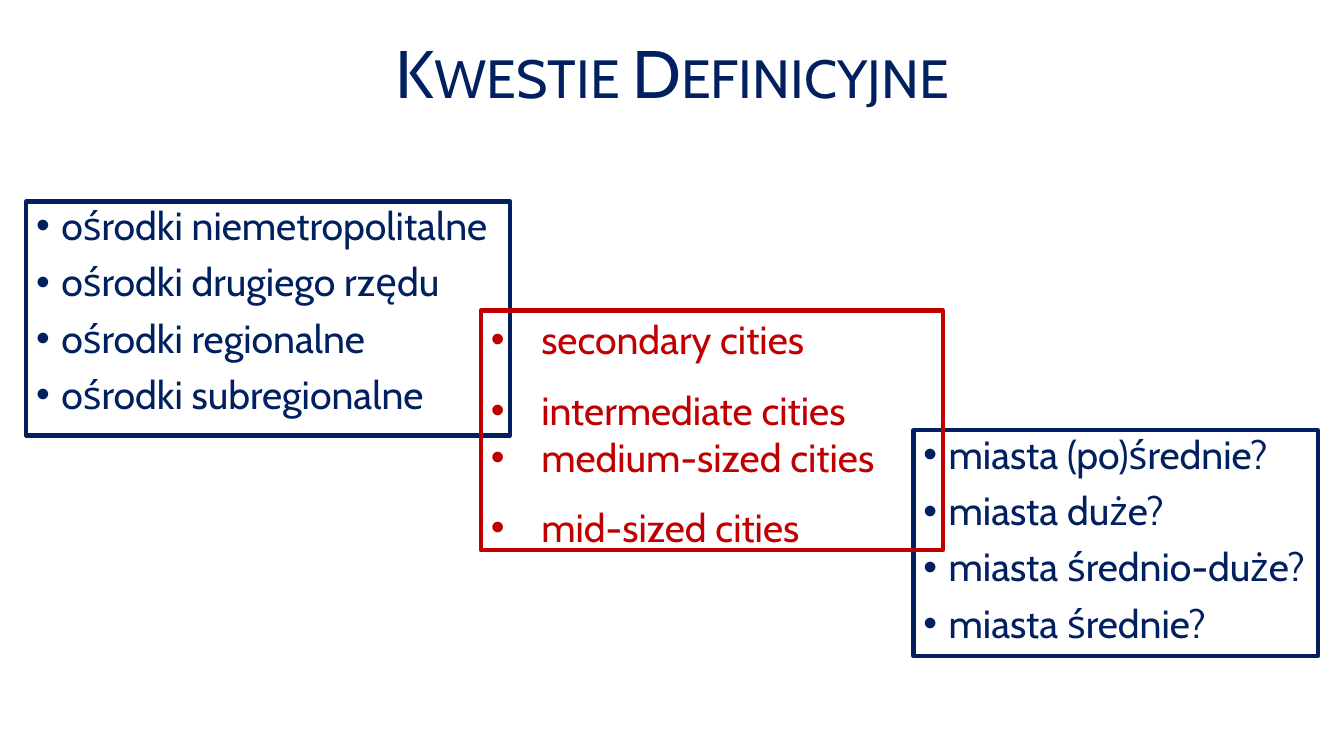
from dataclasses import dataclass

from lxml.etree import SubElement
from pptx import Presentation
from pptx.dml.color import RGBColor
from pptx.enum.text import MSO_ANCHOR, MSO_AUTO_SIZE, PP_ALIGN
from pptx.oxml.ns import qn
from pptx.slide import Slide
from pptx.text.text import _Paragraph as Paragraph, _Run as Run
from pptx.util import Inches, Pt

NAVY = RGBColor(0x00, 0x20, 0x60)
RED = RGBColor(0xC0, 0x00, 0x00)
FONT = "Cabin"


@dataclass(frozen=True)
class TermBox:
    left: float
    top: float
    width: float
    height: float
    color: RGBColor
    terms: tuple[str, ...]
    indent: float = 0.25
    spacings: tuple[float, ...] = (0.9,) * 4
    space_before: int = 10
    auto_size: MSO_AUTO_SIZE = MSO_AUTO_SIZE.NONE


BOXES = (
    TermBox(0.26, 2, 4.8, 2.32, NAVY,
            ("ośrodki niemetropolitalne", "ośrodki drugiego rzędu",
             "ośrodki regionalne", "ośrodki subregionalne")),
    TermBox(9.06, 4.27, 4.01, 2.24, NAVY,
            ("miasta (po)średnie?", "miasta duże?",
             "miasta średnio-duże?", "miasta średnie?")),
    TermBox(4.77, 3.08, 4.58, 2.38, RED,
            ("secondary cities", "intermediate cities",
             "medium-sized cities", "mid-sized cities"),
            0.5, (1.0, 1.5, 1.0, 1.5), 0, MSO_AUTO_SIZE.SHAPE_TO_FIT_TEXT),
)


def add_run(p: Paragraph, text: str, size: int, color: RGBColor) -> Run:
    r = p.add_run()
    r.text = text
    r.font.name = FONT
    r.font.size = Pt(size)
    r.font.color.rgb = color
    return r


def set_bullet(p: Paragraph, indent: float) -> None:
    pPr = p._p.get_or_add_pPr()
    pPr.set("marL", str(Inches(indent)))
    pPr.set("indent", str(Inches(-indent)))
    SubElement(pPr, qn("a:buFont")).set("typeface", "Arial")
    SubElement(pPr, qn("a:buChar")).set("char", "•")


def draw_title(s: Slide, text: str) -> None:
    sp = s.shapes.add_textbox(Inches(0.92), Inches(0.12), Inches(11.5), Inches(1.29))
    tf = sp.text_frame
    tf.word_wrap = True
    tf.vertical_anchor = MSO_ANCHOR.MIDDLE
    p = tf.paragraphs[0]
    p.alignment = PP_ALIGN.CENTER
    p.line_spacing = 0.9
    r = add_run(p, text, 48, NAVY)
    r._r.get_or_add_rPr().set("cap", "small")


def draw_box(s: Slide, box: TermBox) -> None:
    sp = s.shapes.add_textbox(Inches(box.left), Inches(box.top),
                              Inches(box.width), Inches(box.height))
    sp.line.color.rgb = box.color
    sp.line.width = Pt(3)
    tf = sp.text_frame
    tf.word_wrap = True
    tf.auto_size = box.auto_size
    for i, (term, spacing) in enumerate(zip(box.terms, box.spacings)):
        p = tf.add_paragraph() if i else tf.paragraphs[0]
        p.line_spacing = spacing
        p.space_before = Pt(box.space_before)
        set_bullet(p, box.indent)
        add_run(p, term, 28, box.color)


def main() -> None:
    """Build the slide of definitions with three overlapping term boxes."""
    prs = Presentation()
    prs.slide_width = Inches(13.33)
    prs.slide_height = Inches(7.5)
    s = prs.slides.add_slide(prs.slide_layouts[6])
    draw_title(s, "Kwestie Definicyjne")
    for box in BOXES:
        draw_box(s, box)
    prs.save("out.pptx")


if __name__ == "__main__":
    main()
